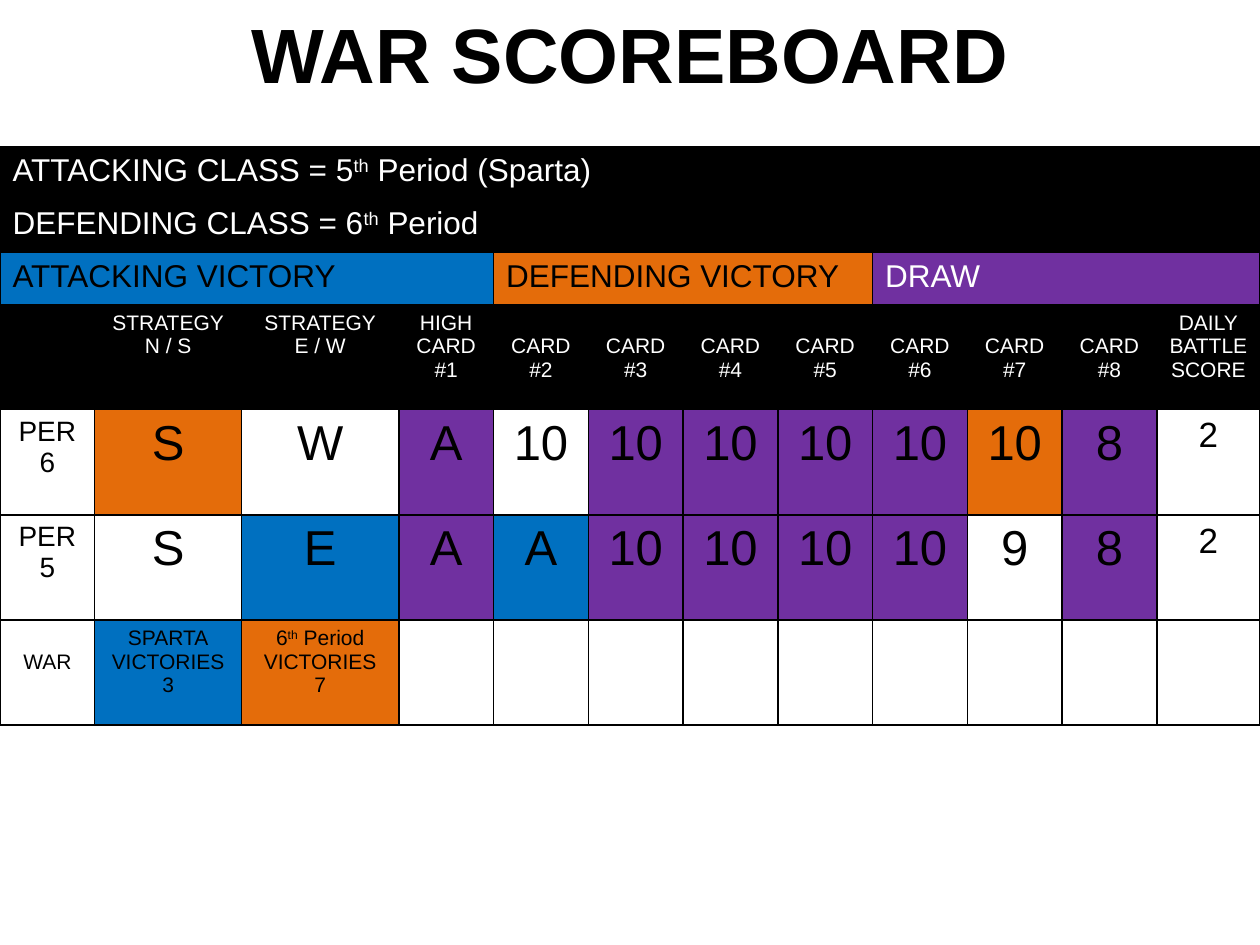
from dataclasses import dataclass

from lxml.etree import SubElement
from pptx import Presentation
from pptx.dml.color import RGBColor
from pptx.enum.text import MSO_ANCHOR, PP_ALIGN
from pptx.oxml.ns import qn
from pptx.table import Table, _Cell
from pptx.text.text import TextFrame
from pptx.util import Cm, Pt

BLACK, WHITE = "000000", "FFFFFF"
ATTACK, DEFENCE, DRAW = "0070C0", "E46C0A", "7030A0"
COLUMN_WIDTHS = [1.91, 2.96, 3.17] + [1.91] * 8 + [2.08]
ROW_HEIGHTS = [1.06] * 3 + [2.12] * 4
TOP_MARGIN = 0.13
LOWERED_MARGIN = 0.61  # starts the text one 12-point line lower


@dataclass
class Entry:
    text: str = ""
    fill: str | None = None
    color: str = BLACK
    size: int = 12
    span: int = 1
    align: PP_ALIGN = PP_ALIGN.CENTER
    top: float = TOP_MARGIN


def rgb(value: str) -> RGBColor:
    return RGBColor.from_string(value)


def write_text(frame: TextFrame, text: str, *, size: int, color: str = BLACK,
               bold: bool = False, align: PP_ALIGN = PP_ALIGN.CENTER) -> None:
    """Write one paragraph per line; parts between carets are superscript."""
    for index, line in enumerate(text.split("\n")):
        paragraph = frame.add_paragraph() if index else frame.paragraphs[0]
        paragraph.alignment = align
        for part_index, part in enumerate(line.split("^")):
            if not part:
                continue
            run = paragraph.add_run()
            run.text = part
            run.font.name = "Arial"
            run.font.size = Pt(size)
            run.font.bold = bold
            run.font.color.rgb = rgb(color)
            if part_index % 2:
                run._r.get_or_add_rPr().set("baseline", "30000")


def add_borders(cell: _Cell) -> None:
    properties = cell._tc.get_or_add_tcPr()
    for side in ("lnL", "lnR", "lnT", "lnB"):
        line = SubElement(properties, qn(f"a:{side}"), w=str(Pt(1)))
        fill = SubElement(line, qn("a:solidFill"))
        SubElement(fill, qn("a:srgbClr"), val=BLACK)


def fill_row(table: Table, row: int, entries: list[Entry]) -> None:
    column = 0
    for entry in entries:
        cell = table.cell(row, column)
        if entry.span > 1:
            cell.merge(table.cell(row, column + entry.span - 1))
        for offset in range(entry.span):
            add_borders(table.cell(row, column + offset))
        if entry.fill:
            cell.fill.solid()
            cell.fill.fore_color.rgb = rgb(entry.fill)
        else:
            cell.fill.background()
        cell.margin_top = Cm(entry.top)
        write_text(cell.text_frame, entry.text, size=entry.size,
                   color=entry.color, align=entry.align)
        column += entry.span


def banner(text: str, fill: str, color: str, span: int) -> Entry:
    return Entry(text, fill, color, size=18, span=span, align=PP_ALIGN.LEFT)


def heading(text: str, top: float = TOP_MARGIN) -> Entry:
    return Entry(text, BLACK, WHITE, top=top)


def period_row(period: str, plays: list[tuple[str, str | None]], score: str) -> list[Entry]:
    return [Entry(f"PER\n{period}", size=16),
            *(Entry(play, fill, size=28) for play, fill in plays),
            Entry(score, size=20)]


def main() -> None:
    presentation = Presentation()
    presentation.slide_width, presentation.slide_height = Cm(25.4), Cm(19.05)
    slide = presentation.slides.add_slide(presentation.slide_layouts[6])

    title = slide.shapes.add_textbox(0, 0, Cm(25.4), Cm(2.12)).text_frame
    title.word_wrap = True
    title.vertical_anchor = MSO_ANCHOR.MIDDLE
    write_text(title, "WAR SCOREBOARD", size=44, bold=True)

    table = slide.shapes.add_table(
        len(ROW_HEIGHTS), len(COLUMN_WIDTHS), 0, Cm(2.96),
        Cm(sum(COLUMN_WIDTHS)), Cm(sum(ROW_HEIGHTS))).table
    table.first_row = table.horz_banding = False
    for column, width in zip(table.columns, COLUMN_WIDTHS):
        column.width = Cm(width)
    for row, height in zip(table.rows, ROW_HEIGHTS):
        row.height = Cm(height)

    drawn_tens = [("10", DRAW)] * 4
    rows = [
        [banner("ATTACKING CLASS = 5^th^ Period (Sparta)", BLACK, WHITE, 12)],
        [banner("DEFENDING CLASS = 6^th^ Period", BLACK, WHITE, 12)],
        [banner("ATTACKING VICTORY", ATTACK, BLACK, 4),
         banner("DEFENDING VICTORY", DEFENCE, BLACK, 4),
         banner("DRAW", DRAW, WHITE, 4)],
        [heading(""), heading("STRATEGY\nN / S"), heading("STRATEGY\nE / W"),
         heading("HIGH\nCARD\n#1"),
         *(heading(f"CARD\n#{number}", LOWERED_MARGIN) for number in range(2, 9)),
         heading("DAILY\nBATTLE\nSCORE")],
        period_row("6", [("S", DEFENCE), ("W", None), ("A", DRAW), ("10", None),
                         *drawn_tens, ("10", DEFENCE), ("8", DRAW)], "2"),
        period_row("5", [("S", None), ("E", ATTACK), ("A", DRAW), ("A", ATTACK),
                         *drawn_tens, ("9", None), ("8", DRAW)], "2"),
        [Entry("WAR", top=LOWERED_MARGIN),
         Entry("SPARTA\nVICTORIES\n3", ATTACK),
         Entry("6^th^ Period\nVICTORIES\n7", DEFENCE),
         *[Entry()] * 9],
    ]
    for index, entries in enumerate(rows):
        fill_row(table, index, entries)

    presentation.save("out.pptx")


if __name__ == "__main__":
    main()
